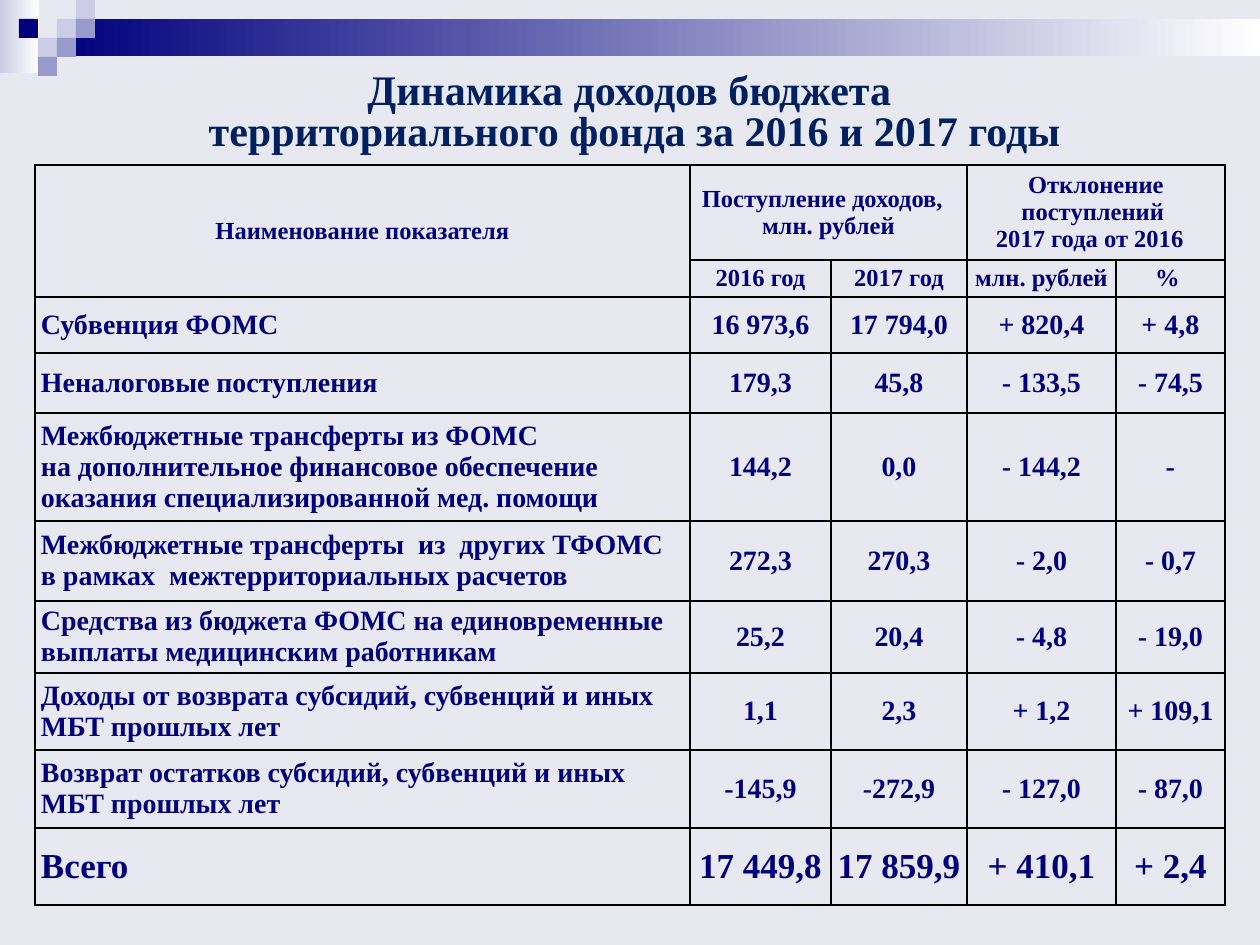
import pptx
import pptx.util
import pptx.dml.color
import pptx.enum.shapes
import pptx.enum.text
import pptx.oxml

SCALE = 914400 / 126
FONT = "Times New Roman"
NAVY, LILAC, PALE, WHITE = "00007D", "9999CC", "CCCCE6", "FFFFFF"
ALIGN = pptx.enum.text.PP_ALIGN
MIDDLE = pptx.enum.text.MSO_ANCHOR.MIDDLE

COLS = [655, 141, 136, 149, 109]
ROWS = [95, 37, 56, 60, 108, 80, 72, 77, 78, 77]
# first row, first column, rows spanned, columns spanned, lines
HEADS = [
    (0, 0, 2, 1, ["Наименование показателя"]),
    (0, 1, 1, 2, ["Поступление доходов,  ", "млн. рублей"]),
    (0, 3, 1, 2, ["Отклонение поступлений ", "2017 года от 2016  "]),
    (1, 1, 1, 1, ["2016 год"]),
    (1, 2, 1, 1, ["2017 год"]),
    (1, 3, 1, 1, ["млн. рублей"]),
    (1, 4, 1, 1, ["% "]),
]
DATA = [
    ("Субвенция ФОМС", "16 973,6", "17 794,0", "+ 820,4", "+ 4,8"),
    ("Неналоговые поступления", "179,3", "45,8", "- 133,5", "- 74,5"),
    ("Межбюджетные трансферты из ФОМС \nна дополнительное финансовое обеспечение "
     "оказания специализированной мед. помощи", "144,2", "0,0", "- 144,2", "-"),
    ("Межбюджетные трансферты  из  других ТФОМС в рамках  межтерриториальных расчетов",
     "272,3", "270,3", "- 2,0", "- 0,7"),
    ("Средства из бюджета ФОМС на единовременные выплаты медицинским работникам",
     "25,2", "20,4", "- 4,8", "- 19,0"),
    ("Доходы от возврата субсидий, субвенций и иных МБТ прошлых лет",
     "1,1", "2,3", "+ 1,2", "+ 109,1"),
    ("Возврат остатков субсидий, субвенций и иных МБТ прошлых лет",
     "-145,9", "-272,9", "- 127,0", "- 87,0"),
    ("Всего ", "17 449,8", "17 859,9", "+ 410,1", "+ 2,4"),
]


def px(n):
    return pptx.util.Emu(round(n * SCALE))


def rgb(code):
    return pptx.dml.color.RGBColor.from_string(code)


def write(para, text, size, color, align):
    """Add text run by run, with a line break at each newline."""
    para.alignment = align
    for i, part in enumerate(text.split("\n")):
        if i:
            para.add_line_break()
        run = para.add_run()
        run.text = part
        run.font.name = FONT
        run.font.size = pptx.util.Pt(size)
        run.font.bold = True
        run.font.color.rgb = rgb(color)


def rect(slide, x, y, w, h, *colors):
    """Draw a plain block, or a left-to-right gradient for two colours."""
    kind = pptx.enum.shapes.MSO_SHAPE.RECTANGLE
    shape = slide.shapes.add_shape(kind, px(x), px(y), px(w), px(h))
    shape.shadow.inherit = False
    shape.line.fill.background()
    if len(colors) == 1:
        shape.fill.solid()
        shape.fill.fore_color.rgb = rgb(colors[0])
        return
    shape.fill.gradient()
    shape.fill.gradient_angle = 0
    for stop, color in zip(shape.fill.gradient_stops, colors):
        stop.color.rgb = rgb(color)


def banner(slide):
    rect(slide, 0, 0, 39, 73, PALE, WHITE)
    rect(slide, 57, 19, 1203, 37, NAVY, WHITE)
    side = 19
    blocks = [(3, 1, PALE), (4, 0, PALE), (4, 1, LILAC), (2, 2, PALE),
              (1, 1, NAVY), (3, 2, LILAC), (2, 3, LILAC)]
    for col, row, color in blocks:
        rect(slide, col * side, row * side, side, side, color)


def title(slide):
    box = slide.shapes.add_textbox(px(44), px(59), px(1181), px(110))
    frame = box.text_frame
    frame.word_wrap = True
    frame.vertical_anchor = MIDDLE
    para = frame.paragraphs[0]
    para.line_spacing = 0.8
    write(para, "Динамика доходов бюджета \nтерриториального фонда за 2016 и 2017 годы",
          24, "002060", ALIGN.CENTER)


def border(cell):
    props = cell._tc.get_or_add_tcPr()
    for i, side in enumerate("LRTB"):
        props.insert(i, pptx.oxml.parse_xml(
            f'<a:ln{side} xmlns:a="http://schemas.openxmlformats.org/drawingml/2006/main"'
            ' w="12700"><a:solidFill><a:srgbClr val="000000"/></a:solidFill>'
            f'</a:ln{side}>'))


def fill(cell, lines, size, align):
    frame = cell.text_frame
    for i, line in enumerate(lines):
        para = frame.add_paragraph() if i else frame.paragraphs[0]
        write(para, line, size, NAVY, align)


def grid(slide):
    frame = slide.shapes.add_table(len(ROWS), len(COLS), px(35), px(165),
                                   px(sum(COLS)), px(sum(ROWS)))
    table = frame.table
    table.first_row = table.horz_banding = False
    for col, width in zip(table.columns, COLS):
        col.width = px(width)
    for row, height in zip(table.rows, ROWS):
        row.height = px(height)
    for cell in table.iter_cells():
        cell.fill.background()
        cell.vertical_anchor = MIDDLE
        cell.margin_left = cell.margin_right = px(6)
        cell.margin_top = cell.margin_bottom = 0
        border(cell)
    for r, c, down, across, lines in HEADS:
        cell = table.cell(r, c)
        if down * across > 1:
            cell.merge(table.cell(r + down - 1, c + across - 1))
        fill(cell, lines, 14, ALIGN.CENTER)
    for r, values in enumerate(DATA, 2):
        size = 20 if r == len(ROWS) - 1 else 16
        for c, text in enumerate(values):
            fill(table.cell(r, c), [text], size, ALIGN.CENTER if c else ALIGN.LEFT)


def main():
    deck = pptx.Presentation()
    deck.slide_width, deck.slide_height = px(1260), px(945)
    slide = deck.slides.add_slide(deck.slide_layouts[6])
    slide.background.fill.solid()
    slide.background.fill.fore_color.rgb = rgb("E8E8F1")
    banner(slide)
    title(slide)
    grid(slide)
    deck.save("out.pptx")


if __name__ == "__main__":
    main()
